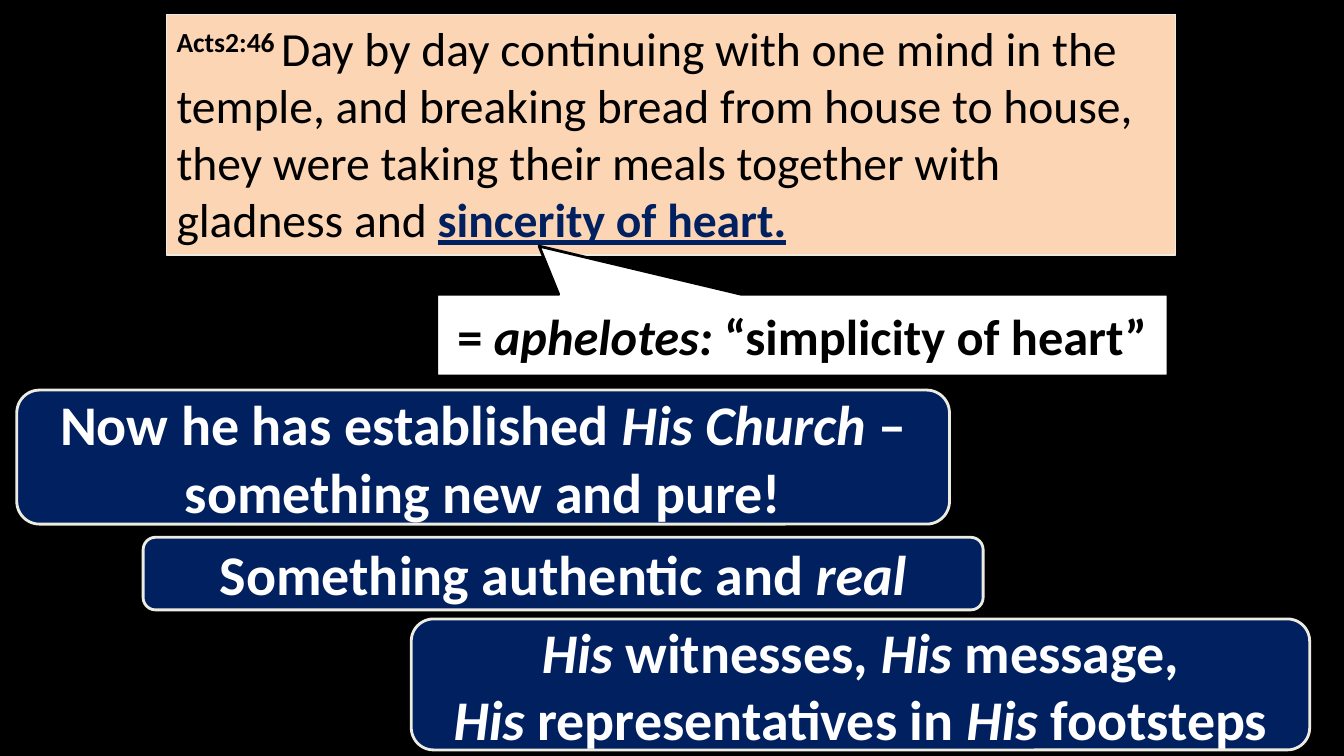
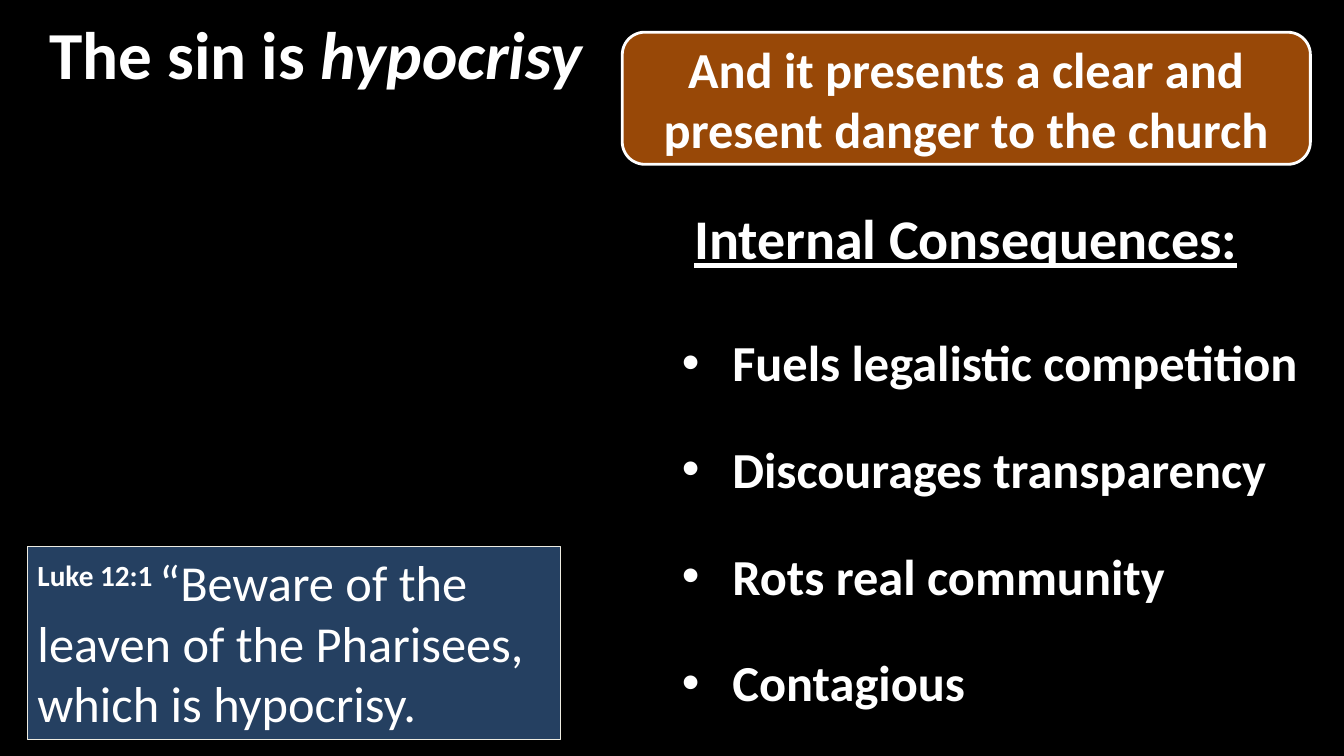
from pptx import Presentation, util as u
from pptx.dml.color import RGBColor
from pptx.enum import shapes, text
from lxml import etree

WIDE, HIGH = u.Inches(13.33), u.Inches(7.5)
BLACK, WHITE, CREAM = "000000", "FFFFFF", "EEECE1"
NAVY, PEACH, RUST, STEEL = "002060", "FCD5B5", "984807", "254061"
FONT = "Calibri"
NS = "http://schemas.openxmlformats.org/drawingml/2006/main"
KIND = shapes.MSO_SHAPE
MID, TOP = text.MSO_ANCHOR.MIDDLE, text.MSO_ANCHOR.TOP
LEFT, CENTER = text.PP_ALIGN.LEFT, text.PP_ALIGN.CENTER


def rgb(code):
    return RGBColor.from_string(code)


def place(box):
    """Turn a box in percent of the slide into slide lengths."""
    x, y, w, h = box
    return [int(side * part / 100)
            for side, part in zip((WIDE, HIGH, WIDE, HIGH), (x, y, w, h))]


def write(shape, lines, size, color=WHITE, align=CENTER, anchor=MID):
    """Each line is a list of (words, marks): b bold, i italic, u underline,
    s superscript, n navy."""
    frame = shape.text_frame
    frame.word_wrap = True
    frame.vertical_anchor = anchor
    for n, line in enumerate(lines):
        para = frame.add_paragraph() if n else frame.paragraphs[0]
        para.alignment = align
        for words, marks in line:
            run = para.add_run()
            run.text = words
            font = run.font
            font.name, font.size = FONT, u.Pt(size)
            font.bold, font.italic = "b" in marks, "i" in marks
            font.underline = "u" in marks
            font.color.rgb = rgb(NAVY if "n" in marks else color)
            if "s" in marks:
                run._r.get_or_add_rPr().set("baseline", "30000")
    return frame


def block(slide, kind, box, fill, edge=None, width=2, tip=()):
    shape = slide.shapes.add_shape(kind, *place(box))
    shape.shadow.inherit = False
    shape.fill.solid()
    shape.fill.fore_color.rgb = rgb(fill)
    if edge:
        shape.line.color.rgb = rgb(edge)
        shape.line.width = u.Pt(width)
    else:
        shape.line.fill.background()
    for n, value in enumerate(tip):
        shape.adjustments[n] = value
    return shape


def plate(slide, box, lines, size=40, fill=NAVY, edge=CREAM):
    shape = block(slide, KIND.ROUNDED_RECTANGULAR_CALLOUT, box, fill, edge,
                  tip=(-0.22, 0.5, 0.17))
    write(shape, lines, size)


def verse(slide, box, line, size, fill, color):
    shape = block(slide, KIND.RECTANGLE, box, fill, CREAM, 0.75)
    write(shape, [line], size, color, LEFT, TOP)


def gloss(slide, box, line):
    shape = block(slide, KIND.RECTANGULAR_CALLOUT, box, WHITE, BLACK,
                  tip=(-0.36, -1.09))
    write(shape, [line], 36, BLACK)


def head(slide, box, line, size):
    write(slide.shapes.add_textbox(*place(box)), [line], size)


def points(slide, box, items):
    shape = block(slide, KIND.RECTANGLE, box, BLACK)
    frame = write(shape, [[(item, "b")] for item in items], 36, align=LEFT)
    for n, para in enumerate(frame.paragraphs):
        if n:
            para.space_before = u.Pt(33)
        props = para._p.get_or_add_pPr()
        props.set("marL", str(u.Inches(0.5)))
        props.set("indent", str(-u.Inches(0.5)))
        etree.SubElement(props, f"{{{NS}}}buFont").set("typeface", "Arial")
        etree.SubElement(props, f"{{{NS}}}buChar").set("char", "•")


def page(deck):
    slide = deck.slides.add_slide(deck.slide_layouts[6])
    slide.background.fill.solid()
    slide.background.fill.fore_color.rgb = rgb(BLACK)
    return slide


def church(deck):
    slide = page(deck)
    # Three stepped statements
    plate(slide, (1.25, 51.6, 69.4, 17.73),
          [[("Now he has established ", "b"), ("His Church", "bi"),
            (" – something new and pure!", "b")]])
    plate(slide, (10.65, 71.07, 62.5, 9.6),
          [[("Something authentic and ", "b"), ("real", "bi")]])
    plate(slide, (30.6, 81.87, 66.85, 17.33),
          [[("His", "bi"), (" witnesses, ", "b"),
            ("His", "bi"), (" message,", "b")],
           [("His", "bi"), (" representatives in ", "b"),
            ("His", "bi"), (" footsteps", "b")]])
    # Verse and the word behind it
    verse(slide, (12.4, 1.87, 75.1, 31.87),
          [("Acts2:46\u00a0", "bs"),
           ("Day by day continuing with one mind in the temple, and breaking "
            "bread from house to house, they were taking their meals "
            "together with gladness and ", ""),
           ("sincerity of heart.", "bun")], 34, PEACH, BLACK)
    gloss(slide, (32.5, 38.93, 54.4, 10.8),
          [("= ", "b"), ("aphelotes: ", "bi"),
           ("“simplicity of heart”", "b")])


def danger(deck):
    slide = page(deck)
    # Title and warning
    head(slide, (0, 0, 47, 14), [("The sin is ", "b"), ("hypocrisy", "bi")], 48)
    plate(slide, (46.3, 4.27, 51.2, 17.47),
          [[("And it presents a clear and present danger to the church", "b")]],
          36, RUST, WHITE)
    # Consequences
    points(slide, (50, 38, 50, 62),
           ["Fuels legalistic competition", "Discourages transparency",
            "Rots real community", "Contagious"])
    head(slide, (49.05, 23.33, 45.6, 16.13),
         [("Internal Consequences:", "bu")], 40)
    # Verse
    verse(slide, (2.05, 72.27, 39.65, 25.6),
          [("Luke 12:1 ", "bs"),
           ("“Beware of the leaven of the Pharisees, which is hypocrisy.", "")],
          36, STEEL, WHITE)


def main():
    deck = Presentation()
    deck.slide_width, deck.slide_height = WIDE, HIGH
    church(deck)
    danger(deck)
    deck.save("out.pptx")


if __name__ == "__main__":
    main()
